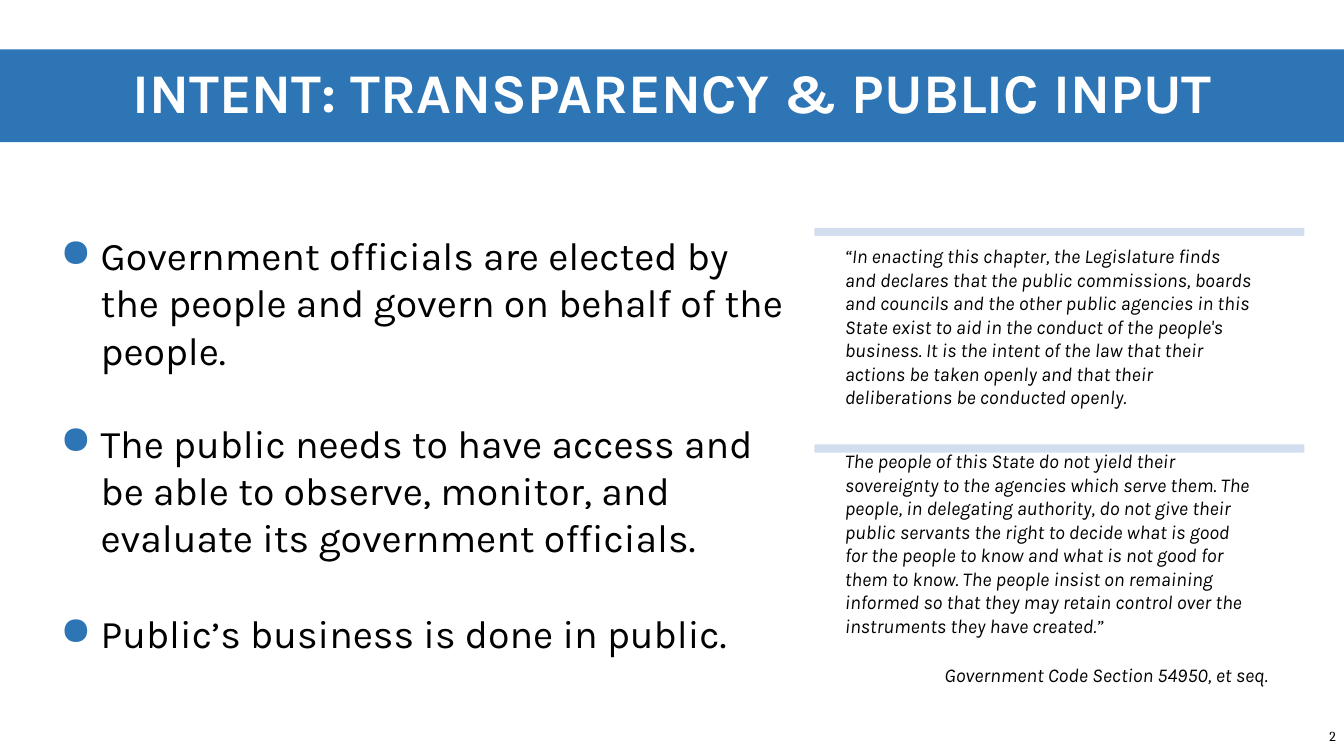
from lxml.etree import SubElement as Sub
from pptx import Presentation
from pptx.dml.color import RGBColor as Rgb
from pptx.enum.shapes import MSO_SHAPE as Form
from pptx.enum.text import MSO_ANCHOR as Anchor, MSO_AUTO_SIZE as Fit, PP_ALIGN as Align
from pptx.oxml.ns import qn
from pptx.util import Inches, Pt

WIDE, HIGH = Inches(13.333), Inches(7.5)
BLUE, PALE, BLACK, WHITE = "2E75B6", "D2DEEF", "000000", "FFFFFF"

TITLE = "INTENT: TRANSPARENCY & PUBLIC INPUT"
# Each point with the space before it
POINTS = [
    ("Government officials are elected by the people and govern on behalf of the people.", 8),
    ("The public needs to have access and be able to observe, monitor, and "
     "evaluate its government officials.", 32.8),
    ("Public’s business is done in public.", 35.2),
]
QUOTES = [
    "“In enacting this chapter, the Legislature finds and declares that the public "
    "commissions, boards and councils and the other public agencies in this State exist "
    "to aid in the conduct of the people's business. It is the intent of the law that "
    "their actions be taken openly and that their deliberations be conducted openly.",
    "The people of this State do not yield their sovereignty to the agencies which serve "
    "them. The people, in delegating authority, do not give their public servants the "
    "right to decide what is good for the people to know and what is not good for them to "
    "know. The people insist on remaining informed so that they may retain control over "
    "the instruments they have created.”",
]
SOURCE = "Government Code Section 54950, et seq."


def share(x, y, w, h):
    """Turn percentages of the slide into lengths."""
    return [int(side * part / 100) for side, part in zip((WIDE, HIGH) * 2, (x, y, w, h))]


def paint(item, color):
    item.fill.solid()
    item.fill.fore_color.rgb = Rgb.from_string(color)


def write(para, text, size=14, color=BLACK, font="Karla", bold=False, italic=False,
          align=Align.LEFT, lead=None, before=0):
    para.alignment, para.space_before = align, Pt(before)
    if lead:
        para.line_spacing = lead
    run = para.add_run()
    run.text = text
    face = run.font
    face.name, face.size, face.bold, face.italic = font, Pt(size), bold, italic
    face.color.rgb = Rgb.from_string(color)


def add_box(shapes, place, anchor=Anchor.TOP, inset=(0.1, 0.05)):
    frame = shapes.add_textbox(*share(*place)).text_frame
    frame.word_wrap, frame.vertical_anchor = True, anchor
    frame.margin_left = frame.margin_right = Inches(inset[0])
    frame.margin_top = frame.margin_bottom = Inches(inset[1])
    return frame


def add_dot(para):
    props = para._p.get_or_add_pPr()
    props.set("marL", str(Inches(0.9)))
    props.set("indent", str(Inches(-0.4)))
    Sub(Sub(props, qn("a:buClr")), qn("a:srgbClr"), val=BLUE)
    Sub(props, qn("a:buChar"), char="●")


def add_title(slide):
    title = slide.shapes.title
    title.left, title.top, title.width, title.height = share(0, 6.53, 100, 12.27)
    paint(title, BLUE)
    frame = title.text_frame
    frame.auto_size, frame.vertical_anchor = Fit.NONE, Anchor.MIDDLE
    write(frame.paragraphs[0], TITLE, size=40, color=WHITE, bold=True,
          align=Align.CENTER, lead=0.9)


def add_quote(shapes, text, top):
    bar = shapes.add_shape(Form.ROUNDED_RECTANGLE, *share(60.6, top, 36.45, 1.07))
    bar.adjustments[0] = 0.1
    bar.shadow.inherit = False
    bar.line.fill.background()
    paint(bar, PALE)
    frame = add_box(shapes, (61.28, top, 33.6, 26.13), Anchor.MIDDLE, (0.21, 0.21))
    write(frame.paragraphs[0], text, italic=True)


def add_points(shapes):
    frame = add_box(shapes, (0, 30, 59.78, 78.93))
    for row, (text, gap) in enumerate(POINTS):
        para = frame.add_paragraph() if row else frame.paragraphs[0]
        para.level = 1
        write(para, text, size=28, before=gap)
        add_dot(para)


def main():
    deck = Presentation()
    deck.slide_width, deck.slide_height = WIDE, HIGH
    slide = deck.slides.add_slide(deck.slide_layouts.get_by_name("Title Only"))
    shapes = slide.shapes

    # Title band
    add_title(slide)

    # Quotes on the right, then the points on the left
    group = shapes.add_group_shape().shapes
    for row, text in enumerate(QUOTES):
        add_quote(group, text, 30.13 + row * 28.67)
    add_points(shapes)

    # Source of the quotes and page number
    source = add_box(shapes, (69.53, 85.73, 50.03, 5.33))
    write(source.paragraphs[0], SOURCE, italic=True, lead=Pt(24))
    page = add_box(shapes, (91.36, 94.67, 8.64, 5.33), Anchor.MIDDLE, (0.08, 0.04))
    write(page.paragraphs[0], "2", size=9.9, font="Cambria", align=Align.RIGHT)

    deck.save("out.pptx")


if __name__ == "__main__":
    main()
